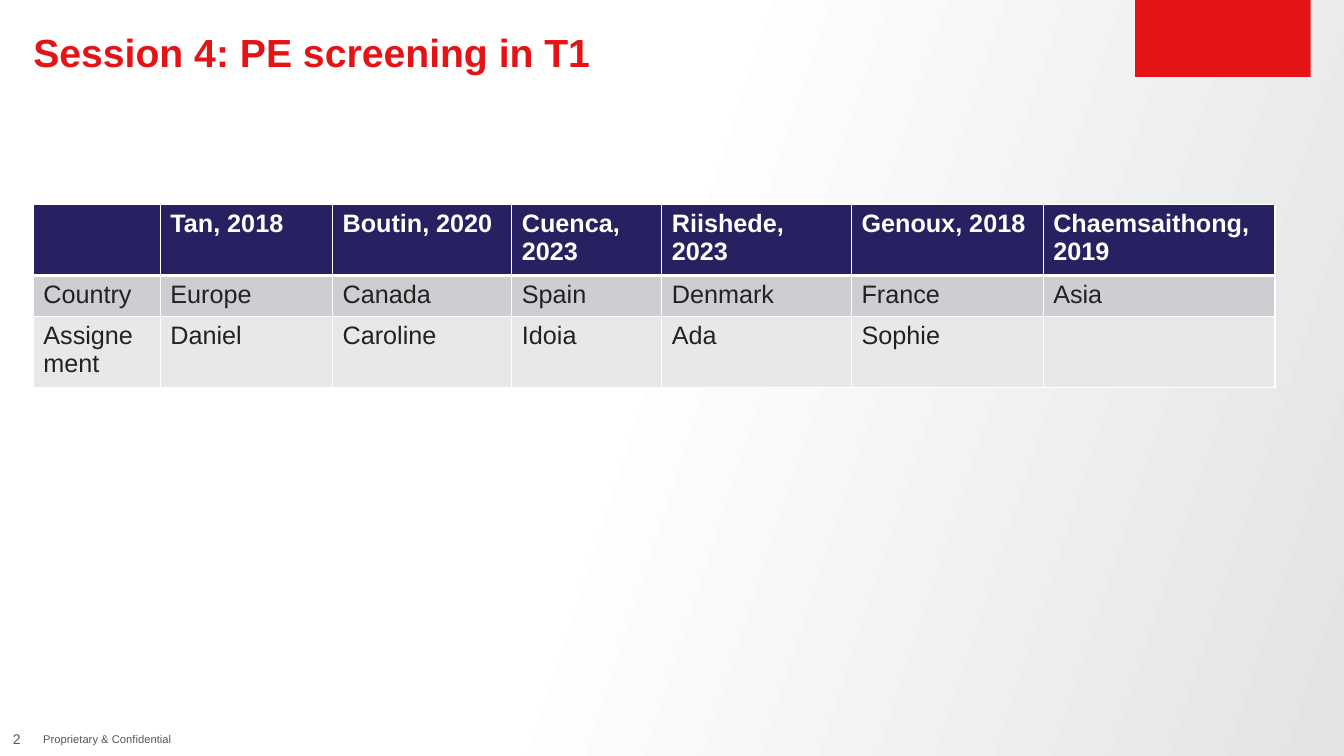
import copy
from dataclasses import dataclass

import pptx
import pptx.dml.color
import pptx.enum.shapes
import pptx.enum.text
import pptx.oxml
import pptx.oxml.ns
import pptx.util

Cm = pptx.util.Cm
Pt = pptx.util.Pt
qn = pptx.oxml.ns.qn
rgb = pptx.dml.color.RGBColor.from_string
ALIGN = pptx.enum.text.PP_ALIGN
ANCHOR = pptx.enum.text.MSO_ANCHOR


@dataclass(frozen=True)
class Theme:
    font: str = "Arial"
    red: str = "E61316"
    navy: str = "262160"
    white: str = "FFFFFF"
    ink: str = "222222"
    grey: str = "545859"
    bands: tuple = ("CDCDD2", "E8E8EA")
    backdrop: tuple = ((0, "FFFFFF"), (0.45, "FFFFFF"), (1, "E2E3E3"))
    title_size: int = 28
    table_size: int = 18
    number_size: int = 10
    note_size: int = 8


THEME = Theme()
MARGIN = 0.84
SLIDE_W, SLIDE_H = 33.87, 19.05

COLUMN_WIDTHS = (3.2, 4.34, 4.52, 3.78, 4.78, 4.83, 5.84)
ROW_HEIGHTS = (1.66, 1.04, 1.66)
STUDIES = (
    ("", "Tan, 2018", "Boutin, 2020", "Cuenca, 2023", "Riishede, 2023",
     "Genoux, 2018", "Chaemsaithong,\n2019"),
    ("Country", "Europe", "Canada", "Spain", "Denmark", "France", "Asia"),
    ("Assignement", "Daniel", "Caroline", "Idoia", "Ada", "Sophie", ""),
)


def write(tf, text, size, color, bold=False, align=ALIGN.LEFT, spacing=None):
    """Fill a text frame, one paragraph per line of text."""
    for i, line in enumerate(text.split("\n")):
        p = tf.add_paragraph() if i else tf.paragraphs[0]
        p.alignment = align
        if spacing:
            p.line_spacing = spacing
        r = p.add_run()
        r.text = line
        r.font.name = THEME.font
        r.font.size = Pt(size)
        r.font.bold = bold
        r.font.color.rgb = rgb(color)


def add_text(s, box, text, inset=True, anchor=ANCHOR.TOP, **fmt):
    tf = s.shapes.add_textbox(*map(Cm, box)).text_frame
    tf.word_wrap = True
    tf.vertical_anchor = anchor
    if not inset:
        tf.margin_left = tf.margin_top = tf.margin_right = tf.margin_bottom = 0
    write(tf, text, **fmt)


def paint_background(s):
    fill = s.background.fill
    fill.gradient()
    fill.gradient_angle = 342
    stop_list = next(s.element.iter(qn("a:gsLst")))
    stop_list.insert(1, copy.deepcopy(stop_list[0]))
    for stop, (position, color) in zip(fill.gradient_stops, THEME.backdrop):
        stop.position = position
        stop.color.rgb = rgb(color)


def add_header(s, x, y, w, h):
    """Title on the left, red corner block flush with the top right."""
    add_text(s, (x, y + MARGIN, 27.1, 1.07), "Session 4: PE screening in T1",
             inset=False, size=THEME.title_size, color=THEME.red, bold=True,
             spacing=0.9)
    block_w = 4.42
    sp = s.shapes.add_shape(pptx.enum.shapes.MSO_SHAPE.RECTANGLE,
                            Cm(x + w - block_w), Cm(y), Cm(block_w), Cm(h))
    sp.shadow.inherit = False
    sp.fill.solid()
    sp.fill.fore_color.rgb = rgb(THEME.red)
    sp.line.fill.background()


def set_borders(cell, **widths):
    """Draw white borders; widths in points by side L, R, T and B."""
    tcPr = cell._tc.get_or_add_tcPr()
    for side in "LRTB":
        tcPr.append(pptx.oxml.parse_xml(
            f'<a:ln{side} {pptx.oxml.ns.nsdecls("a")} w="{Pt(widths.get(side, 1))}">'
            f'<a:solidFill><a:srgbClr val="{THEME.white}"/></a:solidFill></a:ln{side}>'))


def add_study_table(s, x, y):
    frame = s.shapes.add_table(len(ROW_HEIGHTS), len(COLUMN_WIDTHS), Cm(x), Cm(y),
                               Cm(sum(COLUMN_WIDTHS)), Cm(sum(ROW_HEIGHTS)))
    table = frame.table
    for column, width in zip(table.columns, COLUMN_WIDTHS):
        column.width = Cm(width)
    fills = (THEME.navy, *THEME.bands)
    thick_sides = ({"B": 3}, {"T": 3}, {})
    for i, (row, height) in enumerate(zip(table.rows, ROW_HEIGHTS)):
        row.height = Cm(height)
        for cell, text in zip(row.cells, STUDIES[i]):
            set_borders(cell, **thick_sides[i])
            cell.fill.solid()
            cell.fill.fore_color.rgb = rgb(fills[i])
            if text:
                write(cell.text_frame, text, THEME.table_size,
                      THEME.ink if i else THEME.white, bold=i == 0)


def add_footer(s, x, y, h):
    add_text(s, (x, y, MARGIN, h), "2", inset=False, anchor=ANCHOR.MIDDLE,
             size=THEME.number_size, color=THEME.grey, align=ALIGN.CENTER)
    add_text(s, (x + MARGIN, y, 12.47, h), "Proprietary & Confidential",
             anchor=ANCHOR.MIDDLE, size=THEME.note_size, color=THEME.grey)


def main():
    prs = pptx.Presentation()
    prs.slide_width, prs.slide_height = Cm(SLIDE_W), Cm(SLIDE_H)
    s = prs.slides.add_slide(prs.slide_layouts[6])
    paint_background(s)
    add_header(s, MARGIN, 0, SLIDE_W - 2 * MARGIN, 1.94)
    add_study_table(s, MARGIN, 5.16)
    add_footer(s, 0, SLIDE_H - MARGIN, MARGIN)
    prs.save("out.pptx")


if __name__ == "__main__":
    main()
